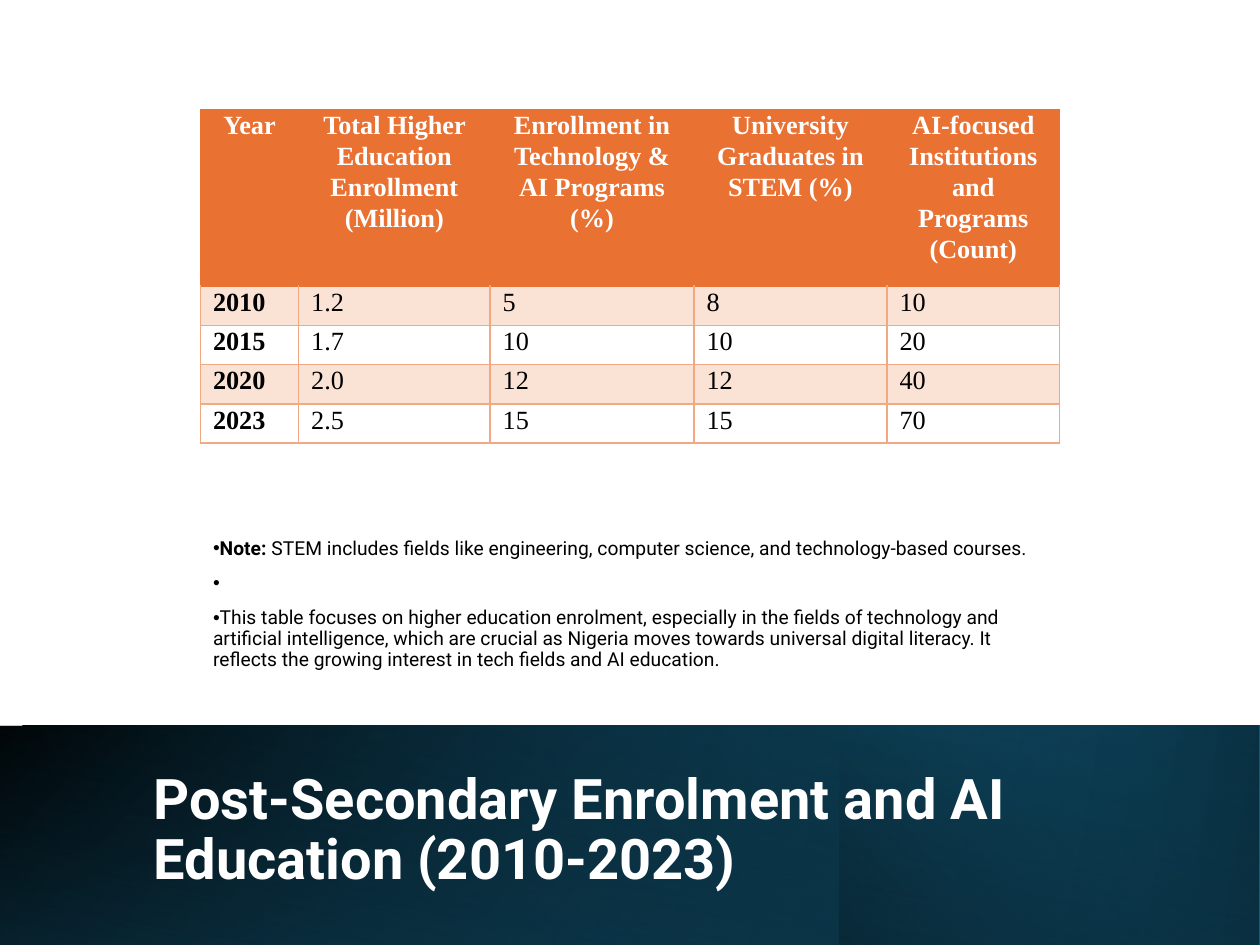
from dataclasses import dataclass
from typing import NamedTuple

from lxml import etree
from pptx import Presentation
from pptx import util as u
from pptx.dml.color import RGBColor
from pptx.enum import shapes, text
from pptx.oxml import parse_xml
from pptx.oxml.ns import nsdecls, qn


@dataclass(frozen=True)
class Theme:
    white: str = "FFFFFF"
    black: str = "000000"
    navy: str = "0B3041"
    teal: str = "156082"
    header: str = "E97132"
    stripe: str = "FAE2D5"
    grid: str = "F1A983"
    sans: str = "Roboto"
    serif: str = "Times New Roman"
    title_size: int = 32
    table_size: int = 15
    note_size: int = 11


THEME = Theme()


class Box(NamedTuple):
    """Position and size in centimetres."""
    left: float
    top: float
    width: float
    height: float

    def lengths(self) -> list:
        return [u.Cm(value) for value in self]


class Stop(NamedTuple):
    position: int
    color: str
    opacity: int = 100


@dataclass(frozen=True)
class Band:
    box: Box
    angle: int
    stops: tuple
    flipped: bool = True
    rotation: int = 0


BAND_TOP, BAND_HEIGHT = 14.63, 4.42
BANDS = (
    Band(Box(0, BAND_TOP, 25.4, BAND_HEIGHT), 140,
         (Stop(0, THEME.black), Stop(100, THEME.teal))),
    Band(Box(0, BAND_TOP, 25.37, BAND_HEIGHT), 170,
         (Stop(0, THEME.teal, 0), Stop(100, THEME.navy))),
    Band(Box(16.92, BAND_TOP, 8.48, BAND_HEIGHT), 220,
         (Stop(0, THEME.navy), Stop(100, THEME.teal, 0))),
    Band(Box(-0.03, BAND_TOP, 25.4, 4.44), 280,
         (Stop(0, THEME.black, 0), Stop(99, THEME.navy, 55)),
         flipped=False, rotation=180),
)

TITLE = "Post-Secondary Enrolment and AI Education (2010-2023)"
TITLE_BOX = Box(2.84, 15.32, 20.62, 2.87)

# Each note is a list of (text, bold) runs
NOTES = (
    (("Note:", True),
     (" STEM includes fields like engineering, computer science, and "
      "technology-based courses.", False)),
    ((" ", False),),
    (("This table focuses on higher education enrolment, especially in the "
      "fields of technology and artificial intelligence, which are crucial as "
      "Nigeria moves towards universal digital literacy. It reflects the "
      "growing interest in tech fields and AI education.", False),),
)
NOTES_BOX = Box(4.04, 10.64, 17.35, 3.1)

ROWS = (
    ("Year", "Total Higher Education Enrollment (Million)",
     "Enrollment in Technology & AI Programs (%)",
     "University Graduates in STEM (%)",
     "AI-focused Institutions and Programs (Count)"),
    ("2010", "1.2", "5", "8", "10"),
    ("2015", "1.7", "10", "10", "20"),
    ("2020", "2.0", "12", "12", "40"),
    ("2023", "2.5", "15", "15", "70"),
)
COLUMN_WIDTHS = (1.98, 3.86, 4.11, 3.89, 3.48)
HEADER_HEIGHT, ROW_HEIGHT = 3.56, 0.79


def style_run(run, font: str, size: int, color: str, bold: bool) -> None:
    run.font.name = font
    run.font.size = u.Pt(size)
    run.font.color.rgb = RGBColor.from_string(color)
    run.font.bold = bold


def space_paragraph(paragraph, line: float, after: int = 0) -> None:
    paragraph.line_spacing = line
    paragraph.space_before = u.Pt(0)
    paragraph.space_after = u.Pt(after)


def place(shape, box: Box) -> None:
    shape.left, shape.top, shape.width, shape.height = box.lengths()
    frame = shape.text_frame
    frame.word_wrap = True
    frame.auto_size = text.MSO_AUTO_SIZE.NONE
    frame.vertical_anchor = text.MSO_ANCHOR.MIDDLE


def add_band(slide, band: Band, layer: int) -> None:
    shape = slide.shapes.add_shape(shapes.MSO_SHAPE.RECTANGLE, *band.box.lengths())
    shape.shadow.inherit = False
    shape.line.fill.background()
    shape.rotation = band.rotation
    shape.fill.background()
    properties = shape._element.spPr
    properties.get_or_add_xfrm().flipH = band.flipped
    stops = "".join(
        f'<a:gs pos="{stop.position * 1000}"><a:srgbClr val="{stop.color}">'
        f'<a:alpha val="{stop.opacity * 1000}"/></a:srgbClr></a:gs>'
        for stop in band.stops)
    gradient = parse_xml(
        f'<a:gradFill {nsdecls("a")} rotWithShape="1"><a:gsLst>{stops}</a:gsLst>'
        f'<a:lin ang="{band.angle * 60000}" scaled="0"/></a:gradFill>')
    properties.replace(properties.find(qn("a:noFill")), gradient)
    # Keep the bands behind the placeholders
    slide.shapes._spTree.insert(2 + layer, shape._element)


def add_title(slide) -> None:
    title = slide.shapes.title
    place(title, TITLE_BOX)
    title.text_frame.text = TITLE
    paragraph = title.text_frame.paragraphs[0]
    paragraph.alignment = text.PP_ALIGN.LEFT
    space_paragraph(paragraph, 0.9)
    style_run(paragraph.runs[0], THEME.sans, THEME.title_size, THEME.white, True)


def add_notes(slide) -> None:
    body = slide.placeholders[1]
    place(body, NOTES_BOX)
    frame = body.text_frame
    frame.text = "\n".join("" for _ in NOTES)
    for paragraph, runs in zip(frame.paragraphs, NOTES):
        space_paragraph(paragraph, 0.9, 8)
        for words, bold in runs:
            run = paragraph.add_run()
            run.text = words
            style_run(run, THEME.sans, THEME.note_size, THEME.black, bold)
        properties = paragraph._p.get_or_add_pPr()
        properties.set("marL", "0")
        properties.set("indent", str(-u.Cm(0.64)))
        etree.SubElement(properties, qn("a:buFont"), typeface="Arial")
        etree.SubElement(properties, qn("a:buChar"), char="•")


def set_borders(cell, colors: dict) -> None:
    properties = cell._tc.get_or_add_tcPr()
    for index, side in enumerate("LRTB"):
        properties.insert(index, parse_xml(
            f'<a:ln{side} {nsdecls("a")} w="12700"><a:solidFill>'
            f'<a:srgbClr val="{colors[side]}"/></a:solidFill></a:ln{side}>'))


def fill_cell(cell, words: str, row: int, column: int) -> None:
    is_header = row == 0
    cell.margin_top = cell.margin_bottom = 0
    cell.text_frame.text = words
    paragraph = cell.text_frame.paragraphs[0]
    paragraph.alignment = text.PP_ALIGN.CENTER if is_header else text.PP_ALIGN.LEFT
    space_paragraph(paragraph, 1.07, 8)
    style_run(paragraph.runs[0], THEME.serif, THEME.table_size,
              THEME.white if is_header else THEME.black, is_header or column == 0)
    if is_header or row % 2:
        cell.fill.solid()
        cell.fill.fore_color.rgb = RGBColor.from_string(
            THEME.header if is_header else THEME.stripe)
    else:
        cell.fill.background()
    colors = dict.fromkeys("LRTB", THEME.header if is_header else THEME.grid)
    if row == 1:
        colors["T"] = THEME.header
    set_borders(cell, colors)


def add_enrolment_table(slide) -> None:
    height = HEADER_HEIGHT + ROW_HEIGHT * (len(ROWS) - 1)
    box = Box(4.04, 2.21, sum(COLUMN_WIDTHS), height)
    table = slide.shapes.add_table(len(ROWS), len(COLUMN_WIDTHS), *box.lengths()).table
    for column, width in zip(table.columns, COLUMN_WIDTHS):
        column.width = u.Cm(width)
    for row, values in enumerate(ROWS):
        table.rows[row].height = u.Cm(ROW_HEIGHT if row else HEADER_HEIGHT)
        for column, words in enumerate(values):
            fill_cell(table.cell(row, column), words, row, column)


def main() -> None:
    presentation = Presentation()
    presentation.slide_width, presentation.slide_height = u.Cm(25.4), u.Cm(19.05)
    slide = presentation.slides.add_slide(presentation.slide_layouts[1])
    for layer, band in enumerate(BANDS):
        add_band(slide, band, layer)
    add_title(slide)
    add_notes(slide)
    add_enrolment_table(slide)
    presentation.save("out.pptx")


if __name__ == "__main__":
    main()
